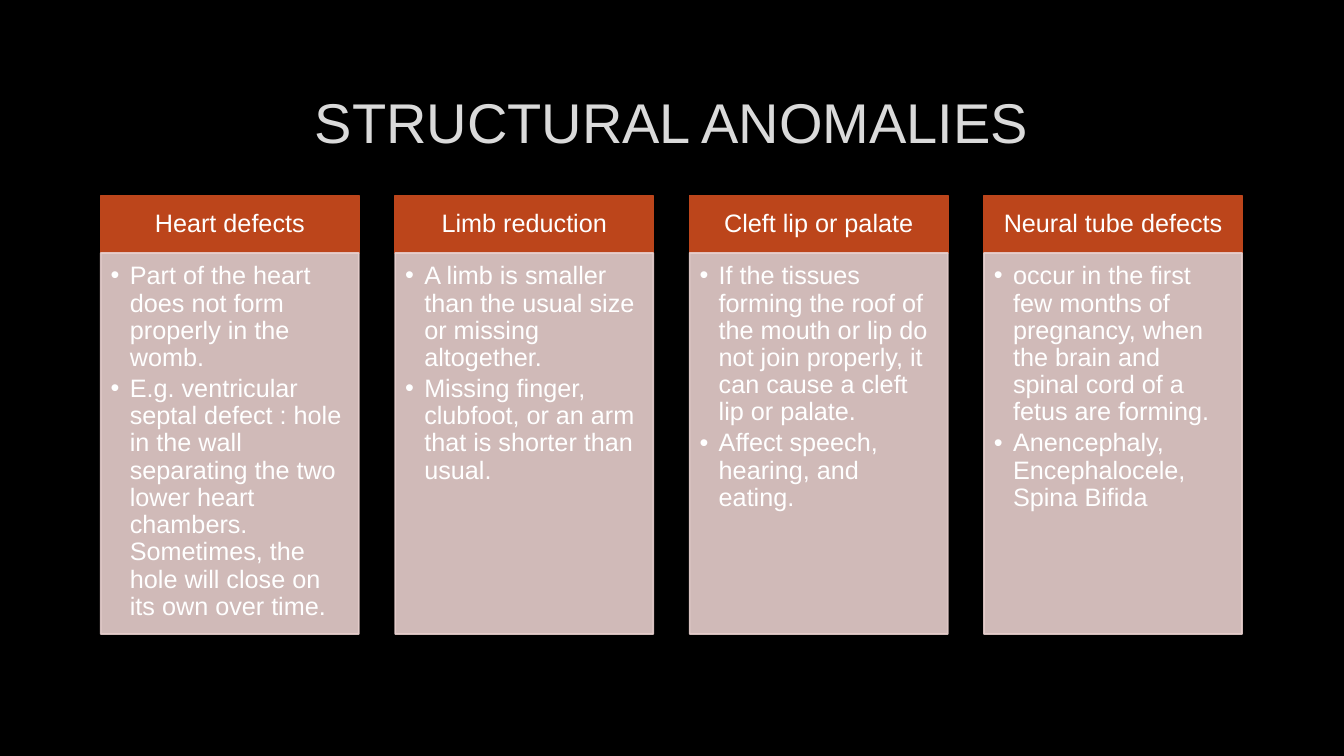
"""Build the slide on structural anomalies: four headed cards in a row."""
from dataclasses import dataclass
from lxml import etree
from pptx import Presentation
from pptx import util as u
from pptx.dml.color import RGBColor
from pptx.enum import shapes, text
from pptx.oxml.ns import qn


@dataclass
class Theme:
    font: str = "Arial"
    back: str = "000000"
    title: str = "DADADA"
    outline: str = "404040"
    head: str = "BC451B"
    card: str = "E7CFCD"
    words: str = "FFFFFF"
    title_size: float = 40
    text_size: float = 18
    border: float = 1.25


theme = Theme()
CARDS = [
    ("Heart defects",
     ["Part of the heart does not form properly in the womb.",
      "E.g. ventricular septal defect : hole in the wall separating the two lower "
      "heart chambers. Sometimes, the hole will close on its own over time."]),
    ("Limb reduction",
     ["A limb is smaller than the usual size or missing altogether.",
      "Missing finger, clubfoot, or an arm that is shorter than usual."]),
    ("Cleft lip or palate",
     ["If the tissues forming the roof of the mouth or lip do not join properly, "
      "it can cause a cleft lip or palate.",
      "Affect speech, hearing, and eating."]),
    ("Neural tube defects",
     ["occur in the first few months of pregnancy, when the brain and spinal cord "
      "of a fetus are forming.",
      "Anencephaly, Encephalocele, Spina Bifida"]),
]
LEFT, TOP, WIDTH, PITCH = 1, 1.94, 2.56, 2.92
HEAD_H, BODY_H = 0.57, 3.78
INDENT = u.Inches(0.19)


def style(p, size, color):
    for r in p.runs:
        r.font.name = theme.font
        r.font.size = u.Pt(size)
        r.font.color.rgb = RGBColor.from_string(color)


def panel(s, box, color, alpha, insets, anchor, lines):
    sp = s.shapes.add_shape(shapes.MSO_SHAPE.RECTANGLE, *map(u.Inches, box))
    sp.shadow.inherit = False
    sp.fill.solid()
    sp.line.width = u.Pt(theme.border)
    for paint in (sp.fill.fore_color, sp.line.color):
        paint.rgb = RGBColor.from_string(color)
    if alpha < 100:
        for clr in sp.element.spPr.iter(qn("a:srgbClr")):
            etree.SubElement(clr, qn("a:alpha"), val=str(alpha * 1000))
    tf = sp.text_frame
    tf.word_wrap = True
    tf.vertical_anchor = anchor
    tf.margin_left, tf.margin_top, tf.margin_right, tf.margin_bottom = map(u.Inches, insets)
    tf.text = "\n".join(lines)
    for p in tf.paragraphs:
        p.alignment = text.PP_ALIGN.CENTER
        p.line_spacing = 0.9
        style(p, theme.text_size, theme.words)
    return tf


prs = Presentation()
prs.slide_width, prs.slide_height = u.Inches(13.33), u.Inches(7.5)
s = prs.slides.add_slide(prs.slide_layouts[5])
s.background.fill.solid()
s.background.fill.fore_color.rgb = RGBColor.from_string(theme.back)

title = s.shapes.title
title.left, title.top, title.width, title.height = map(u.Inches, (LEFT, 0.67, 11.32, 1.06))
tf = title.text_frame
tf.text = "STRUCTURAL ANOMALIES"
tf.vertical_anchor = text.MSO_ANCHOR.MIDDLE
p = tf.paragraphs[0]
p.alignment = text.PP_ALIGN.CENTER
style(p, theme.title_size, theme.title)
ln = etree.Element(qn("a:ln"), w=str(u.Pt(0.75)))
clr = etree.SubElement(etree.SubElement(ln, qn("a:solidFill")), qn("a:srgbClr"), val=theme.outline)
etree.SubElement(clr, qn("a:alpha"), val="10000")
p.runs[0].font._element.insert(0, ln)

for col, (heading, points) in enumerate(CARDS):
    x = LEFT + col * PITCH
    panel(s, (x, TOP, WIDTH, HEAD_H), theme.head, 100,
          (0.14, 0.08, 0.14, 0.08), text.MSO_ANCHOR.MIDDLE, [heading])
    tf = panel(s, (x, TOP + HEAD_H, WIDTH, BODY_H), theme.card, 90,
               (0.1, 0.1, 0.14, 0.16), text.MSO_ANCHOR.TOP, points)
    for p in tf.paragraphs:
        p.alignment = text.PP_ALIGN.LEFT
        p.level = 1
        p.space_after = u.Pt(0.15 * theme.text_size)
        pPr = p._p.get_or_add_pPr()
        pPr.set("marL", str(INDENT))
        pPr.set("indent", str(-INDENT))
        etree.SubElement(pPr, qn("a:buFont"), typeface=theme.font)
        etree.SubElement(pPr, qn("a:buChar"), char="•")

prs.save("out.pptx")
